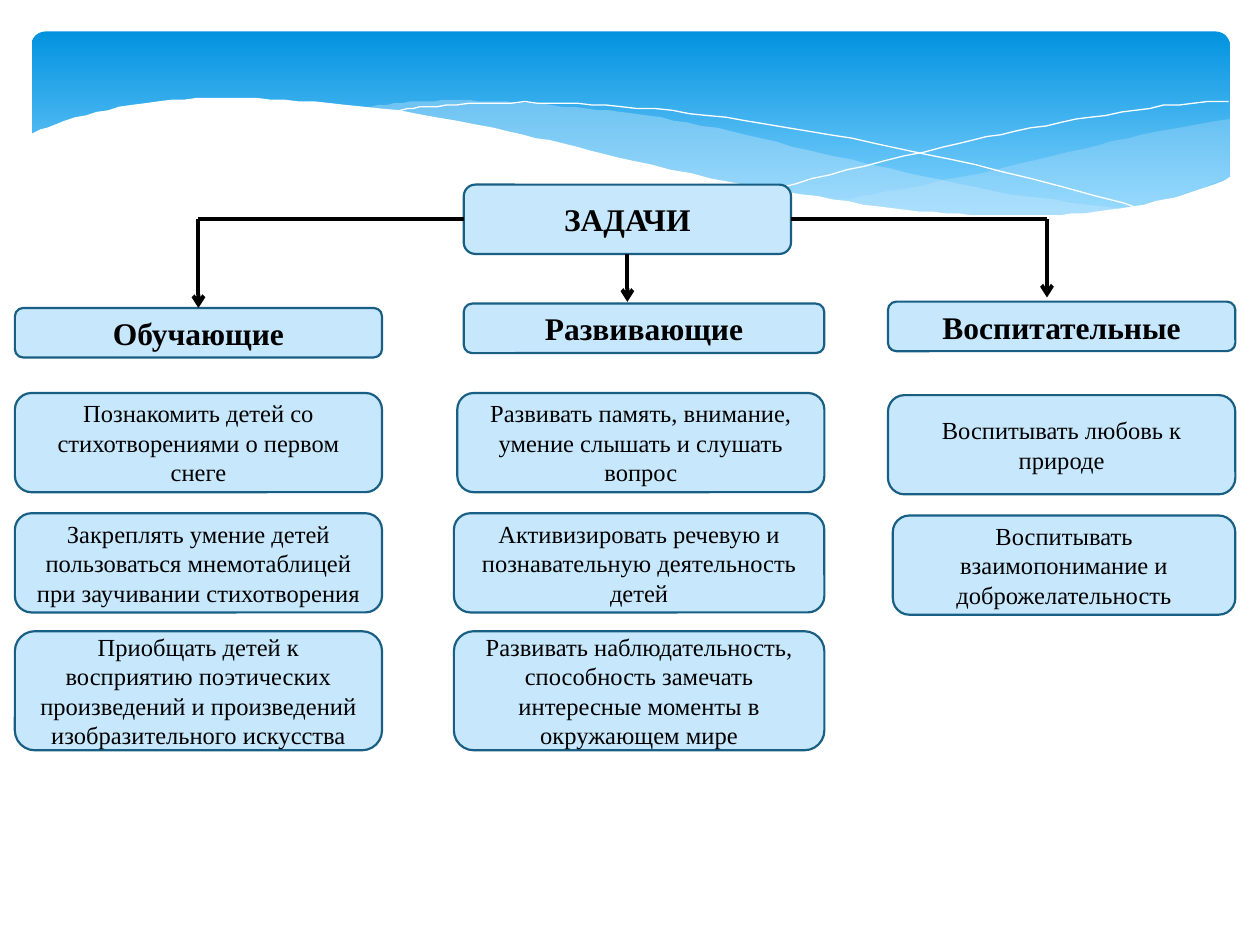
from lxml import etree
from pptx import Presentation
from pptx.dml.color import RGBColor
from pptx.enum import shapes, text
from pptx.oxml.ns import qn
from pptx.util import Pt

PALE, EDGE, BLACK, WHITE = "C6E7FC", "195F84", "000000", "FFFFFF"


def paint(fill, tint, alpha=100):
    """Solid fill with an optional opacity in percent."""
    fill.solid()
    fill.fore_color.rgb = RGBColor.from_string(tint)
    if alpha < 100:
        node = fill._xPr.find(qn("a:solidFill"))[0]
        etree.SubElement(node, qn("a:alpha")).set("val", str(alpha * 1000))


def smooth(knots, steps=5):
    """Points of a Catmull-Rom curve through the knots."""
    ends = [knots[0], *knots, knots[-1]]
    out = [knots[0]]
    for a, b, c, d in zip(ends, ends[1:], ends[2:], ends[3:]):
        for i in range(1, steps + 1):
            t = i / steps
            out.append(tuple(
                (2 * q + (r - p) * t + (2 * p - 5 * q + 4 * r - s) * t ** 2
                 + (3 * q - p - 3 * r + s) * t ** 3) / 2
                for p, q, r, s in zip(a, b, c, d)))
    return out


deck = Presentation()
deck.slide_width, deck.slide_height = Pt(720), Pt(540)
slide = deck.slides.add_slide(deck.slide_layouts[6])
tree = slide.shapes
ROUND = shapes.MSO_SHAPE.ROUNDED_RECTANGLE

# Gradient banner
sky = tree.add_shape(ROUND, Pt(18), Pt(18), Pt(684.7), Pt(112.3))
sky.adjustments[0] = 0.071
sky.shadow.inherit = False
sky.line.fill.background()
sky.fill.gradient()
sky.fill.gradient_angle = 270
for stop, (pos, tint) in zip(sky.fill.gradient_stops, [(0, "0293E0"), (0.9, "83D3FE")]):
    stop.position = pos
    stop.color.rgb = RGBColor.from_string(tint)

# Waves: edges (each a smooth curve), opacity; no opacity means an open white line
waves = [
    ([[(702.7, 67.7), (652.3, 77), (620, 85), (561, 98.6), (508.3, 109.4), (476, 115.2)],
      [(476, 115.2), (517.7, 120.2), (553.7, 123.1), (586, 123.8), (615, 122.4),
       (645.8, 118.8), (673.2, 112.3), (702.7, 101.5)]], 29),
    ([[(643, 120.2), (602.6, 114.5), (558, 107.3), (508.3, 96.5), (453, 83.5),
       (409.7, 73.4), (370, 66.2), (334.8, 61.9), (302.4, 59), (273.6, 57.6),
       (247.7, 57.6), (225.4, 59), (206, 61.9)],
      [(206, 61.9), (246.2, 67.7), (291, 76.3), (323.3, 83.5), (381.6, 97.2),
       (432.7, 108), (478.8, 116), (519.8, 121), (556.6, 123.8), (589, 124.6),
       (617, 123.1), (643, 120.2)]], 40),
    ([[(222.5, 64.8), (236.2, 61.9), (261.4, 59.8), (299.5, 58.5), (337.7, 59.8),
       (383.8, 63.4), (437.8, 70.6), (500.4, 82), (572.4, 98), (653, 119.5)]], None),
    ([[(441.4, 108.7), (483.8, 97.2), (538.6, 84.2), (580.3, 75), (623.5, 67),
       (665.3, 60.5), (702, 57.6)]], None),
    ([[(703.4, 101.3), (676.8, 110.9), (647.3, 118), (612, 122.4), (582.5, 123.2),
       (548, 122.4), (509.8, 118.8), (466.6, 112.3), (417, 103.7), (362.2, 92.2),
       (321.8, 82), (281.5, 73.4), (227.5, 63.4), (180, 58.3), (139, 56.2),
       (105, 56.9), (68.4, 61.2), (37.4, 69), (16.6, 77)],
      [(16.6, 161)], [(703.4, 161)]], 100),
]
for edges, alpha in waves:
    dots = [dot for edge in edges for dot in (smooth(edge) if len(edge) > 1 else edge)]
    pen = tree.build_freeform(*dots[0], scale=Pt(1))
    pen.add_line_segments(dots[1:], close=alpha is not None)
    wave = pen.convert_to_shape()
    wave.shadow.inherit = False
    if alpha is None:
        wave.fill.background()
        paint(wave.line.fill, WHITE)
        wave.line.width = Pt(0)
    else:
        paint(wave.fill, WHITE if alpha == 100 else PALE, alpha)
        wave.line.fill.background()

# Boxes: left, top, width, height, words; the root and column heads are bold
heads = [
    (265, 105.5, 187, 39.6, "ЗАДАЧИ"),
    (8.5, 176, 209.8, 28.3, "Обучающие"),
    (265, 173.5, 206, 28.3, "Развивающие"),
    (507.4, 172.4, 198.5, 28.3, "Воспитательные"),
]
tasks = [
    (8.5, 224.6, 209.8, 56.7, "Познакомить детей со стихотворениями о первом снеге"),
    (8.5, 293.3, 209.8, 56.7,
     "Закреплять умение детей пользоваться мнемотаблицей при заучивании стихотворения"),
    (8.5, 360.7, 209.8, 68,
     "Приобщать детей к восприятию поэтических произведений и произведений "
     "изобразительного искусства"),
    (261.3, 224.6, 209.8, 56.7,
     "Развивать память, внимание, умение слышать и слушать вопрос"),
    (259.4, 293.3, 211.7, 56.7,
     "Активизировать речевую и познавательную деятельность детей"),
    (259.4, 360.7, 211.7, 68,
     "Развивать наблюдательность, способность замечать интересные моменты "
     "в окружающем мире"),
    (507.4, 225.8, 198.5, 56.7, "Воспитывать любовь к природе"),
    (510.2, 294.6, 195.7, 56.7, "Воспитывать взаимопонимание и доброжелательность"),
]
looks = [(heads, {"name": "Times New Roman", "size": Pt(18), "bold": True}),
         (tasks, {"name": "Times New Roman", "size": Pt(14), "bold": False})]
made = []
for group, look in looks:
    for *area, words in group:
        box = tree.add_shape(ROUND, *map(Pt, area))
        box.shadow.inherit = False
        paint(box.fill, PALE)
        paint(box.line.fill, EDGE)
        box.line.width = Pt(1.25)
        frame = box.text_frame
        frame.word_wrap = True
        frame.vertical_anchor = text.MSO_ANCHOR.MIDDLE
        para = frame.paragraphs[0]
        para.alignment = text.PP_ALIGN.CENTER
        run = para.add_run()
        run.text = words
        for key, val in look.items():
            setattr(run.font, key, val)
        paint(run.font.fill, BLACK)
        made.append(box)

# Connectors: start, end, arrowhead, joined start, joined end
root, teach = made[:2]
links = [
    ((358.5, 145.1), (358.5, 172.5), True, (root, 2), None),
    ((265, 125.3), (113.4, 125.3), False, (root, 1), None),
    ((113.4, 125.3), (113.4, 176), True, None, (teach, 0)),
    ((452, 125.3), (598.3, 125.3), False, (root, 3), None),
    ((598.3, 125.3), (598.3, 170), True, None, None),
]
for start, end, arrow, tail, tip in links:
    link = tree.add_connector(shapes.MSO_CONNECTOR.STRAIGHT, *map(Pt, start + end))
    if tail:
        link.begin_connect(*tail)
    if tip:
        link.end_connect(*tip)
    paint(link.line.fill, BLACK)
    link.line.width = Pt(2.25)
    if arrow:
        etree.SubElement(link.line._get_or_add_ln(), qn("a:tailEnd")).set("type", "arrow")
    etree.SubElement(link._element.spPr, qn("a:effectLst"))

deck.save("out.pptx")
